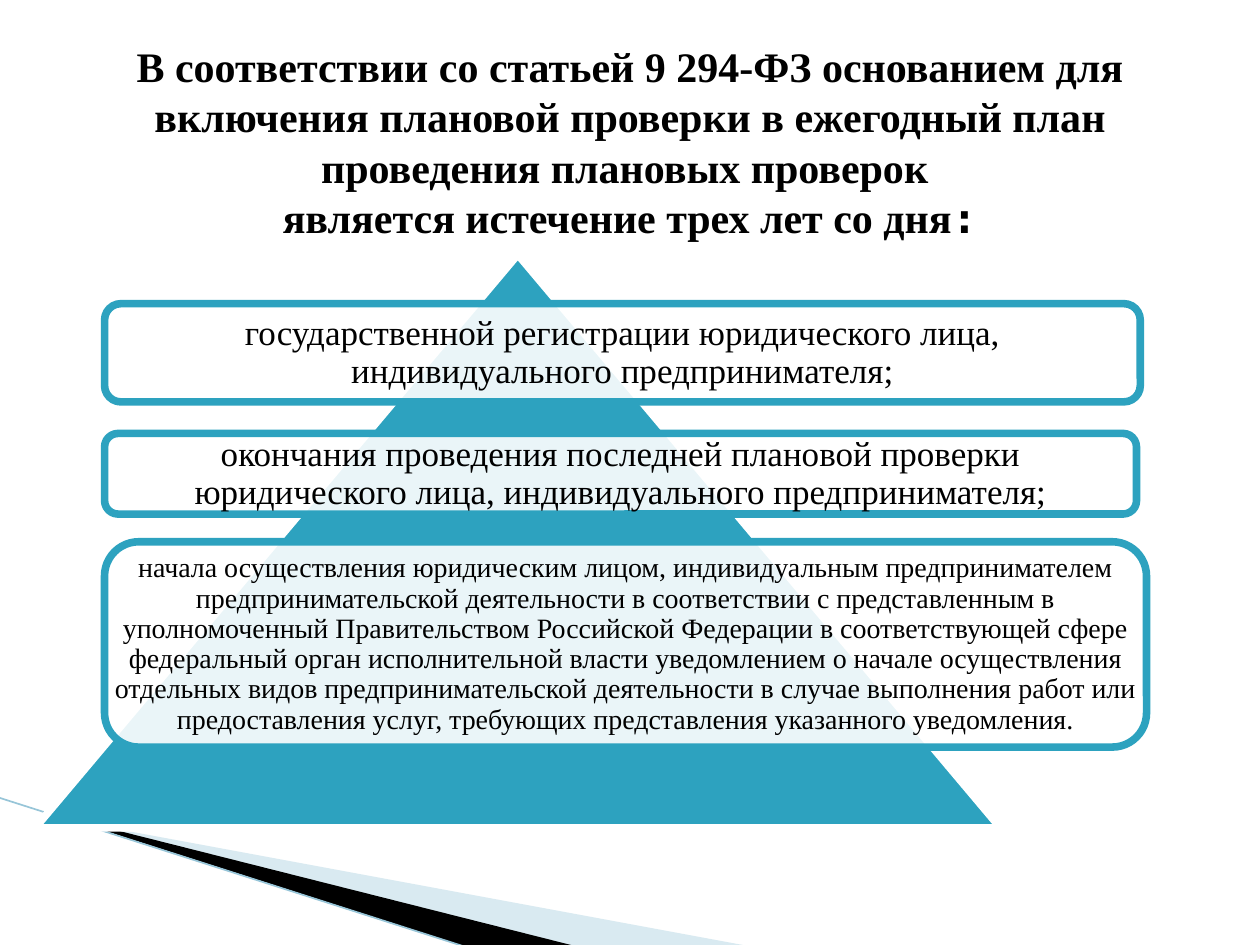
from dataclasses import dataclass

from lxml import etree
from pptx import Presentation
from pptx.dml.color import RGBColor
from pptx.enum.shapes import MSO_CONNECTOR as Connector, MSO_SHAPE as Shape
from pptx.enum.text import MSO_ANCHOR as Anchor, MSO_AUTO_SIZE as AutoSize, PP_ALIGN as Align
from pptx.oxml.ns import qn
from pptx.util import Inches, Pt


@dataclass(frozen=True)
class Theme:
    accent: str = "2DA2BF"
    pale: str = "A0CBDC"
    thin: str = "97C5D8"
    ink: str = "000000"
    paper: str = "FFFFFF"
    font: str = "Times New Roman"
    mono: str = "DejaVu Sans Mono"
    title_size: float = 24
    outline: float = 4.33
    hairline: float = 0.95


@dataclass(frozen=True)
class Reason:
    top: float
    width: float
    height: float
    inset: float
    size: float
    text: str


@dataclass(frozen=True)
class Wedge:
    points: tuple
    color: str
    opacity: int = 100


THEME = Theme()
REASON_LEFT = 0.83
CORNER_INSET = (1 - 0.5 ** 0.5) / 6

WEDGES = (
    Wedge(((0.55, 6.51), (5.95, 7.51), (4.56, 7.51), (0.55, 6.5)), THEME.pale, 40),
    Wedge(((0.53, 6.49), (4.57, 7.51), (3.72, 7.52), (0.54, 6.5)), THEME.ink),
)

REASONS = (
    Reason(2.41, 8.22, 0.78, 0.08, 20,
           "государственной регистрации юридического лица, индивидуального предпринимателя;"),
    Reason(3.44, 8.19, 0.64, 0.08, 20,
           "окончания проведения последней плановой проверки юридического лица, "
           "индивидуального предпринимателя;"),
    Reason(4.3, 8.27, 1.63, 0.07, 16,
           "начала осуществления юридическим лицом, индивидуальным предпринимателем "
           "предпринимательской деятельности в соответствии с представленным в "
           "уполномоченный Правительством Российской Федерации в соответствующей сфере "
           "федеральный орган исполнительной власти уведомлением о начале осуществления "
           "отдельных видов предпринимательской деятельности в случае выполнения работ или "
           "предоставления услуг, требующих представления указанного уведомления."),
)


def paint(shape, color: str, opacity: int = 100) -> None:
    shape.shadow.inherit = False
    shape.fill.solid()
    shape.fill.fore_color.rgb = RGBColor.from_string(color)
    if opacity < 100:
        tone = shape.fill._xPr.find(".//" + qn("a:srgbClr"))
        etree.SubElement(tone, qn("a:alpha"), val=str(opacity * 1000))


def stroke(shape, color: str, width: float) -> None:
    shape.line.color.rgb = RGBColor.from_string(color)
    shape.line.width = Pt(width)


def add_span(para, text: str, size: float, font: str = THEME.font, bold: bool = False) -> None:
    span = para.add_run()
    span.text = text
    span.font.name = font
    span.font.size = Pt(size)
    span.font.bold = bold
    span.font.color.rgb = RGBColor.from_string(THEME.ink)


def add_wedge(page, wedge: Wedge) -> None:
    points = [(Inches(x), Inches(y)) for x, y in wedge.points]
    builder = page.shapes.build_freeform(*points[0])
    builder.add_line_segments(points[1:], close=True)
    shape = builder.convert_to_shape()
    paint(shape, wedge.color, wedge.opacity)
    shape.line.fill.background()


def add_edge(page) -> None:
    edge = page.shapes.add_connector(
        Connector.STRAIGHT, Inches(-0.01), Inches(6.33), Inches(3.71), Inches(7.52))
    stroke(edge, THEME.thin, THEME.hairline)
    etree.SubElement(edge._element.spPr, qn("a:effectLst"))


def add_pyramid(page) -> None:
    pyramid = page.shapes.add_shape(
        Shape.ISOSCELES_TRIANGLE, Inches(0.28), Inches(2.02), Inches(7.66), Inches(4.55))
    paint(pyramid, THEME.accent)
    stroke(pyramid, THEME.paper, THEME.outline)


def add_reason(page, reason: Reason) -> None:
    box = page.shapes.add_shape(
        Shape.ROUNDED_RECTANGLE, Inches(REASON_LEFT), Inches(reason.top),
        Inches(reason.width), Inches(reason.height))
    paint(box, THEME.paper, 90)
    stroke(box, THEME.accent, THEME.outline)
    frame = box.text_frame
    frame.word_wrap = True
    frame.vertical_anchor = Anchor.MIDDLE
    margin = Inches(max(0, reason.inset - reason.height * CORNER_INSET))
    frame.margin_left = frame.margin_right = margin
    frame.margin_top = frame.margin_bottom = margin
    para = frame.paragraphs[0]
    para.alignment = Align.CENTER
    para.line_spacing = 0.9
    add_span(para, reason.text, reason.size)


def fill_title(page) -> None:
    title = page.shapes.title
    title.left, title.top = Inches(0.5), Inches(0.3)
    title.width, title.height = Inches(9), Inches(1.64)
    frame = title.text_frame
    frame.word_wrap = True
    frame.auto_size = AutoSize.NONE
    frame.vertical_anchor = Anchor.MIDDLE
    para = frame.paragraphs[0]
    para.alignment = Align.CENTER
    add_span(para, "В соответствии со статьей 9 294-ФЗ основанием для включения плановой "
                   "проверки в ежегодный план проведения плановых проверок ",
             THEME.title_size, bold=True)
    para.add_line_break()
    add_span(para, "является истечение трех лет со дня", THEME.title_size, bold=True)
    add_span(para, ":", THEME.title_size, THEME.mono, bold=True)


def main() -> None:
    deck = Presentation()
    deck.slide_width, deck.slide_height = Inches(10), Inches(7.5)
    page = deck.slides.add_slide(deck.slide_layouts.get_by_name("Title Only"))
    for wedge in WEDGES:
        add_wedge(page, wedge)
    add_edge(page)
    add_pyramid(page)
    for reason in REASONS:
        add_reason(page, reason)
    fill_title(page)
    deck.save("out.pptx")


if __name__ == "__main__":
    main()
